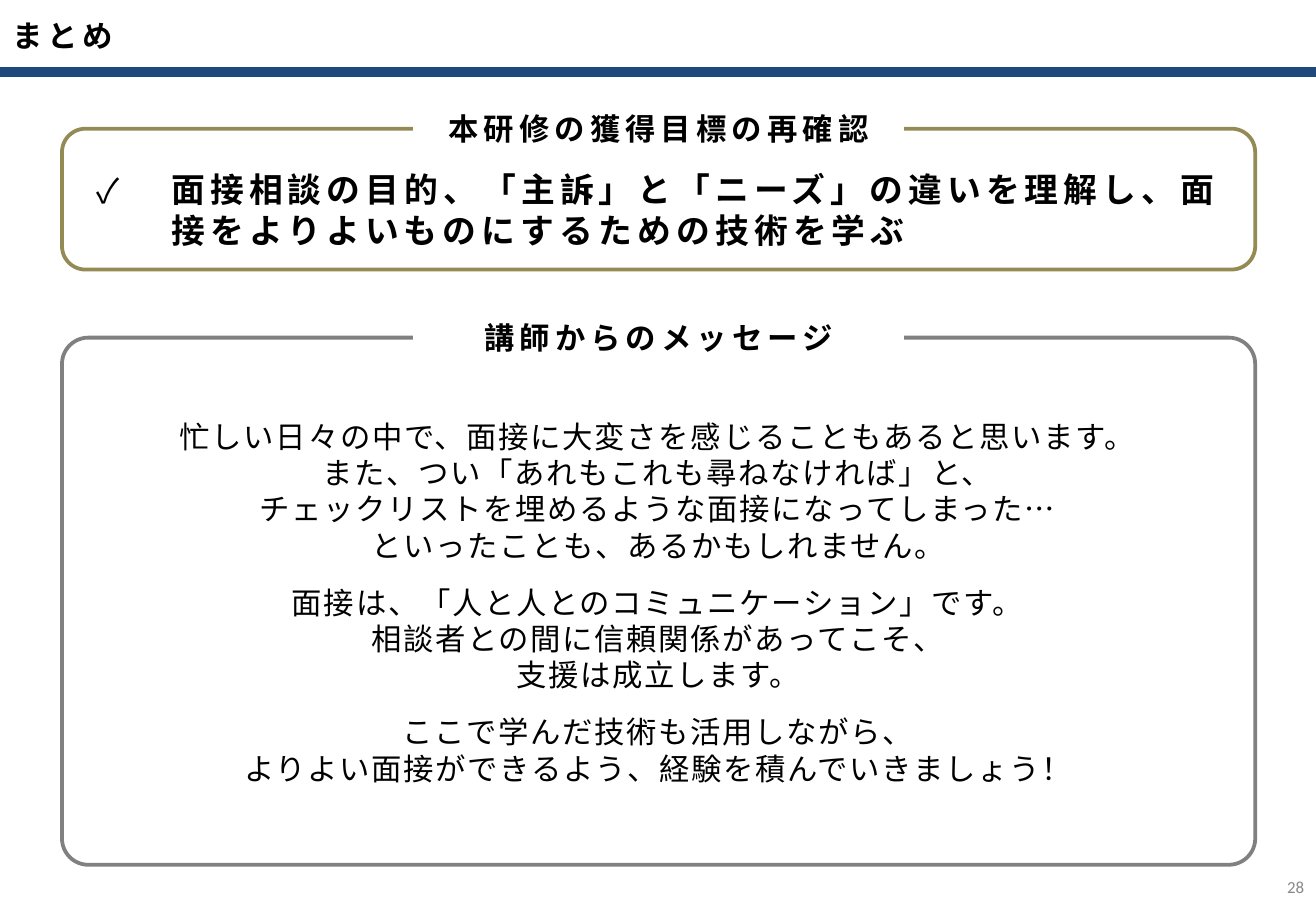
"""Build the closing summary slide with the training goal and the lecturer's message."""
from lxml import etree
from pptx import Presentation
from pptx.dml.color import RGBColor
from pptx.enum.shapes import MSO_CONNECTOR as CONN, MSO_SHAPE as SHAPE
from pptx.enum.text import MSO_ANCHOR as ANCHOR, MSO_AUTO_SIZE as AUTOSIZE, PP_ALIGN as ALIGN
from pptx.oxml.ns import qn
from pptx.util import Emu, Pt

TITLE = "まとめ"
GOAL = ["面接相談の目的、「主訴」と「ニーズ」の違いを理解し、面接をよりよいものにするための技術を学ぶ"]
MESSAGE = [
    "忙しい日々の中で、面接に大変さを感じることもあると思います。\n"
    "また、つい「あれもこれも尋ねなければ」と、\n"
    "チェックリストを埋めるような面接になってしまった…\n"
    "といったことも、あるかもしれません。",
    "面接は、「人と人とのコミュニケーション」です。\n"
    "相談者との間に信頼関係があってこそ、\n"
    "支援は成立します。",
    "ここで学んだ技術も活用しながら、\n"
    "よりよい面接ができるよう、経験を積んでいきましょう！",
]
PAGE = "28"
PANELS = [
    {"label": "本研修の獲得目標の再確認", "top": 106, "height": 116, "line": "olive", "adj": 0.1667},
    {"label": "講師からのメッセージ", "top": 278, "height": 434, "line": "grey", "adj": 0.05},
]

COLORS = {"navy": "1F497D", "olive": "948A54", "grey": "808080",
          "page": "898989", "black": "000000", "white": "FFFFFF"}
JP = "Noto Sans CJK JP"
HEADING = {"size": 18, "bold": True, "spc": 3}
WIDTH, HEIGHT, BAR_Y = 1083, 750, 59
PANEL_X, PANEL_W = 51, 982
LABEL_X, LABEL_W, LABEL_H = 340, 404, 40
INDENT = 62


def px(n):
    return Emu(n * 9144)


def rgb(name):
    return RGBColor.from_string(COLORS[name])


def place(sp, *box):
    for name, n in zip(("left", "top", "width", "height"), box):
        setattr(sp, name, px(n))


def write(sp, texts, size, font=JP, color="black", bold=False, spc=0, align=ALIGN.LEFT, before=0):
    tf = sp.text_frame
    frame = {"word_wrap": True, "auto_size": AUTOSIZE.NONE, "vertical_anchor": ANCHOR.MIDDLE}
    for name, value in frame.items():
        setattr(tf, name, value)
    for i, text in enumerate(texts):
        p = tf.paragraphs[0] if i == 0 else tf.add_paragraph()
        p.text = text.replace("\n", "\v")
        p.alignment, p.space_before = align, Pt(before)
        for r in p.runs:
            for name, value in {"size": Pt(size), "bold": bold, "name": font}.items():
                setattr(r.font, name, value)
            r.font.color.rgb = rgb(color)
            rPr = r._r.get_or_add_rPr()
            rPr.set("spc", str(spc * 100))
            etree.SubElement(rPr, qn("a:ea")).set("typeface", font)


def add_check(p):
    pPr = p._p.get_or_add_pPr()
    pPr.set("marL", str(px(INDENT)))
    pPr.set("indent", str(px(-INDENT)))
    etree.SubElement(pPr, qn("a:buFont")).set("typeface", JP)
    etree.SubElement(pPr, qn("a:buChar")).set("char", "✓")


def add_bar(s):
    bar = s.shapes.add_connector(CONN.STRAIGHT, 0, px(BAR_Y), px(WIDTH), px(BAR_Y))
    bar.line.color.rgb, bar.line.width = rgb("navy"), Pt(6)
    etree.SubElement(bar._element.spPr, qn("a:effectLst"))


def add_box(s, kind, *box):
    sp = s.shapes.add_shape(kind, *map(px, box))
    sp.shadow.inherit = False
    return sp


def add_panel(s, panel):
    frame = add_box(s, SHAPE.ROUNDED_RECTANGLE, PANEL_X, panel["top"], PANEL_W, panel["height"])
    frame.adjustments[0] = panel["adj"]
    frame.fill.background()
    frame.line.color.rgb, frame.line.width = rgb(panel["line"]), Pt(2.25)
    label = add_box(s, SHAPE.RECTANGLE, LABEL_X, panel["top"] - LABEL_H // 2, LABEL_W, LABEL_H)
    label.fill.solid()
    label.fill.fore_color.rgb = rgb("white")
    label.line.fill.background()
    write(label, [panel["label"]], align=ALIGN.CENTER, **HEADING)


def main():
    prs = Presentation()
    prs.slide_width, prs.slide_height = px(WIDTH), px(HEIGHT)
    s = prs.slides.add_slide(prs.slide_layouts[1])
    title, goal = s.shapes.title, s.placeholders[1]
    place(title, 0, 0, WIDTH, BAR_Y)
    write(title, [TITLE], **HEADING)
    place(goal, 69, 141, 946, 63)
    write(goal, GOAL, size=20, bold=True, spc=3)
    add_check(goal.text_frame.paragraphs[0])
    add_bar(s)
    for panel in PANELS:
        add_panel(s, panel)
    message = s.shapes.add_textbox(*map(px, (67, 300, 950, 391)))
    write(message, MESSAGE, size=18, spc=1, align=ALIGN.CENTER, before=12)
    page = s.shapes.add_textbox(*map(px, (1042, 710, 41, 40)))
    write(page, [PAGE], size=10, font="Calibri", color="page", align=ALIGN.RIGHT)
    prs.save("out.pptx")


if __name__ == "__main__":
    main()
